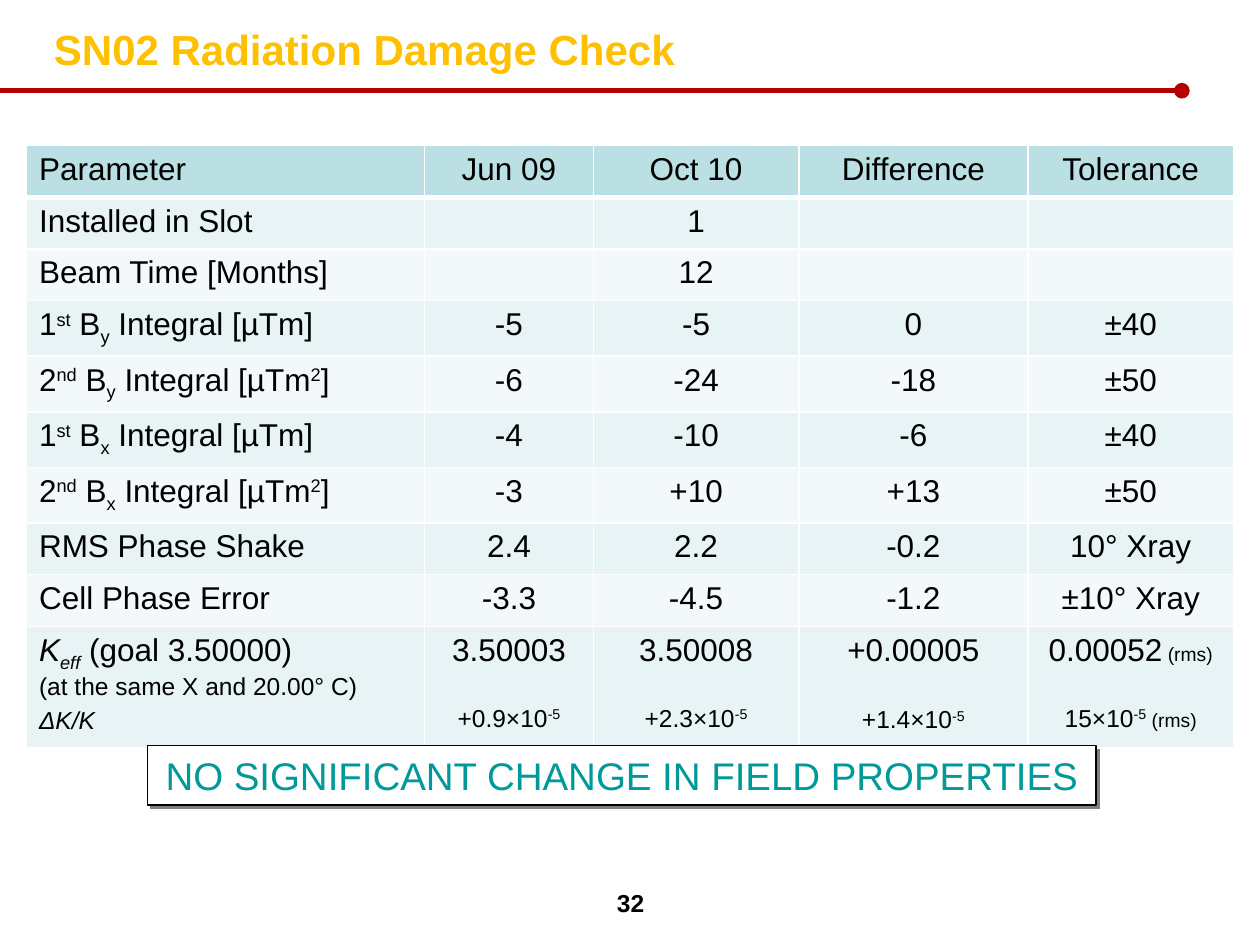
"""Build the SN02 radiation damage check slide."""
from typing import NamedTuple

import lxml.etree
import pptx
import pptx.dml.color
import pptx.enum.shapes
import pptx.enum.text
import pptx.oxml
import pptx.oxml.ns
import pptx.util

COLORS = {
    "title": "FFC000", "rule": "B40000", "header": "BBE0E3", "odd": "E7F3F4",
    "even": "F3F9FA", "white": "FFFFFF", "text": "000000",
    "conclusion": "009999", "shadow": "808080",
}
SLIDE_WIDTH, SLIDE_HEIGHT = pptx.util.Inches(10), pptx.util.Inches(7.5)
COLUMN_SHARES = (31.6, 13.4, 16.3, 18.2, 16.3)
ROW_SHARE = 5.47
LEFT, CENTER = pptx.enum.text.PP_ALIGN.LEFT, pptx.enum.text.PP_ALIGN.CENTER


class Run(NamedTuple):
    text: str
    baseline: int = 0
    size: float | None = None
    italic: bool = False


class Line(NamedTuple):
    runs: tuple[Run, ...]
    size: float = 18
    before: float = 0


class Area(NamedTuple):
    """Left, top, width and height in percent of the slide."""
    left: float
    top: float
    width: float
    height: float


class Style(NamedTuple):
    size: float
    color: str
    bold: bool = False
    align: pptx.enum.text.PP_ALIGN = CENTER


def across(percent: float) -> int:
    return round(SLIDE_WIDTH * percent / 100)


def down(percent: float) -> int:
    return round(SLIDE_HEIGHT * percent / 100)


def place(area: Area) -> tuple[int, int, int, int]:
    return across(area.left), down(area.top), across(area.width), down(area.height)


def rgb(name: str) -> pptx.dml.color.RGBColor:
    return pptx.dml.color.RGBColor.from_string(COLORS[name])


def plain(text: str) -> tuple[Line, ...]:
    return (Line((Run(text),)),)


def integral(order: str, suffix: str, axis: str, power: str = "") -> tuple[Line, ...]:
    unit = (Run(" Integral [µTm"), Run(power, 30), Run("]")) if power else (Run(" Integral [µTm]"),)
    return (Line((Run(order), Run(suffix, 30), Run(" B"), Run(axis, -25), *unit)),)


def deflection(value: str, relative: str, before: float = 21, rms: bool = False) -> tuple[Line, ...]:
    note = (Run(" (rms)", size=11),) if rms else ()
    return (Line((Run(value), *note)),
            Line((Run(relative + "×10"), Run("-5", 30), *note), 14, before))


KEFF = (
    Line((Run("K", italic=True), Run("eff", -25, italic=True), Run(" (goal 3.50000)"))),
    Line((Run("(at the same X and 20.00° C)"),), 14),
    Line((Run("ΔK/K", italic=True),), 14, 4),
)
ROWS = [
    [plain(name) for name in ("Parameter", "Jun 09", "Oct 10", "Difference", "Tolerance")],
    *([label, *map(plain, values)] for label, values in (
        (plain("Installed in Slot"), ("", "1", "", "")),
        (plain("Beam Time [Months]"), ("", "12", "", "")),
        (integral("1", "st", "y"), ("-5", "-5", "0", "±40")),
        (integral("2", "nd", "y", "2"), ("-6", "-24", "-18", "±50")),
        (integral("1", "st", "x"), ("-4", "-10", "-6", "±40")),
        (integral("2", "nd", "x", "2"), ("-3", "+10", "+13", "±50")),
        (plain("RMS Phase Shake"), ("2.4", "2.2", "-0.2", "10° Xray")),
        (plain("Cell Phase Error"), ("-3.3", "-4.5", "-1.2", "±10° Xray")),
    )),
    [KEFF, deflection("3.50003", "+0.9"), deflection("3.50008", "+2.3"),
     deflection("+0.00005", "+1.4", before=22), deflection("0.00052", "15", rms=True)],
]


def style_paragraph(paragraph, style: Style) -> None:
    paragraph.alignment = style.align
    font = paragraph.font
    font.name, font.size, font.bold = "Arial", pptx.util.Pt(style.size), style.bold
    font.color.rgb = rgb(style.color)


def write_lines(frame, lines: tuple[Line, ...], align) -> None:
    for index, line in enumerate(lines):
        paragraph = frame.add_paragraph() if index else frame.paragraphs[0]
        if line.before:
            paragraph.space_before = pptx.util.Pt(line.before)
        style_paragraph(paragraph, Style(line.size, "text", align=align))
        for part in filter(lambda part: part.text, line.runs):
            run = paragraph.add_run()
            run.text = part.text
            if part.size:
                run.font.size = pptx.util.Pt(part.size)
            if part.italic:
                run.font.italic = True
            if part.baseline:
                run.font._element.set("baseline", str(part.baseline * 1000))


def set_borders(cell, bottom: float) -> None:
    properties = cell._tc.get_or_add_tcPr()
    for index, (side, width) in enumerate((("L", 1), ("R", 1), ("T", 1), ("B", bottom))):
        properties.insert(index, pptx.oxml.parse_xml(
            f'<a:ln{side} {pptx.oxml.ns.nsdecls("a")} w="{pptx.util.Pt(width)}"><a:solidFill>'
            f'<a:srgbClr val="{COLORS["white"]}"/></a:solidFill></a:ln{side}>'))


def add_rule(slide, end: float, height: float) -> None:
    rule = slide.shapes.add_connector(
        pptx.enum.shapes.MSO_CONNECTOR.STRAIGHT, 0, down(height), across(end), down(height))
    rule.line.color.rgb = rgb("rule")
    rule.line.width = pptx.util.Pt(3)
    lxml.etree.SubElement(rule.line._get_or_add_ln(), pptx.oxml.ns.qn("a:tailEnd"), type="oval")
    lxml.etree.SubElement(rule._element.spPr, pptx.oxml.ns.qn("a:effectLst"))


def add_label(slide, text: str, area: Area, style: Style):
    label = slide.shapes.add_textbox(*place(area))
    label.text_frame.word_wrap = True
    label.text_frame.text = text
    style_paragraph(label.text_frame.paragraphs[0], style)
    return label.text_frame


def add_measurements(slide, area: Area) -> None:
    table = slide.shapes.add_table(len(ROWS), len(COLUMN_SHARES), *place(area)).table
    table.first_row = table.horz_banding = False
    for column, share in zip(table.columns, COLUMN_SHARES):
        column.width = across(share)
    for row_index, row in enumerate(ROWS):
        table.rows[row_index].height = down(ROW_SHARE)
        band = "header" if row_index == 0 else "odd" if row_index % 2 else "even"
        for column_index, lines in enumerate(row):
            cell = table.cell(row_index, column_index)
            cell.fill.solid()
            cell.fill.fore_color.rgb = rgb(band)
            set_borders(cell, 1 if row_index else 3)
            write_lines(cell.text_frame, lines, CENTER if column_index else LEFT)


def add_conclusion(slide, text: str, area: Area) -> None:
    conclusion = slide.shapes.add_shape(pptx.enum.shapes.MSO_SHAPE.RECTANGLE, *place(area))
    conclusion.fill.solid()
    conclusion.fill.fore_color.rgb = rgb("white")
    conclusion.line.color.rgb = rgb("text")
    conclusion.line.width = pptx.util.Pt(0.75)
    conclusion.shadow.inherit = False
    effects = conclusion._element.spPr.find(pptx.oxml.ns.qn("a:effectLst"))
    effects.append(pptx.oxml.parse_xml(
        f'<a:outerShdw {pptx.oxml.ns.nsdecls("a")} dist="{pptx.util.Pt(2.8)}" dir="{45 * 60000}" '
        f'algn="ctr" rotWithShape="0"><a:srgbClr val="{COLORS["shadow"]}"/></a:outerShdw>'))
    frame = conclusion.text_frame
    frame.word_wrap = False
    frame.auto_size = pptx.enum.text.MSO_AUTO_SIZE.SHAPE_TO_FIT_TEXT
    frame.text = text
    style_paragraph(frame.paragraphs[0], Style(22, "conclusion"))


def main() -> None:
    deck = pptx.Presentation()
    deck.slide_width, deck.slide_height = SLIDE_WIDTH, SLIDE_HEIGHT
    slide = deck.slides.add_slide(deck.slide_layouts[6])
    add_rule(slide, 93.8, 9.6)
    title = add_label(slide, "SN02 Radiation Damage Check", Area(3.3, 1.07, 94.2, 7.73),
                      Style(24, "title", True, LEFT))
    title.vertical_anchor = pptx.enum.text.MSO_ANCHOR.MIDDLE
    title.paragraphs[0].line_spacing = 1.1
    add_measurements(slide, Area(2.1, 15.4, sum(COLUMN_SHARES), ROW_SHARE * len(ROWS)))
    add_conclusion(slide, "NO SIGNIFICANT CHANGE IN FIELD PROPERTIES", Area(11.7, 78.93, 75.3, 6.27))
    add_label(slide, "32", Area(34.2, 93.33, 31.7, 4.67), Style(14, "text", True))
    deck.save("out.pptx")


if __name__ == "__main__":
    main()
